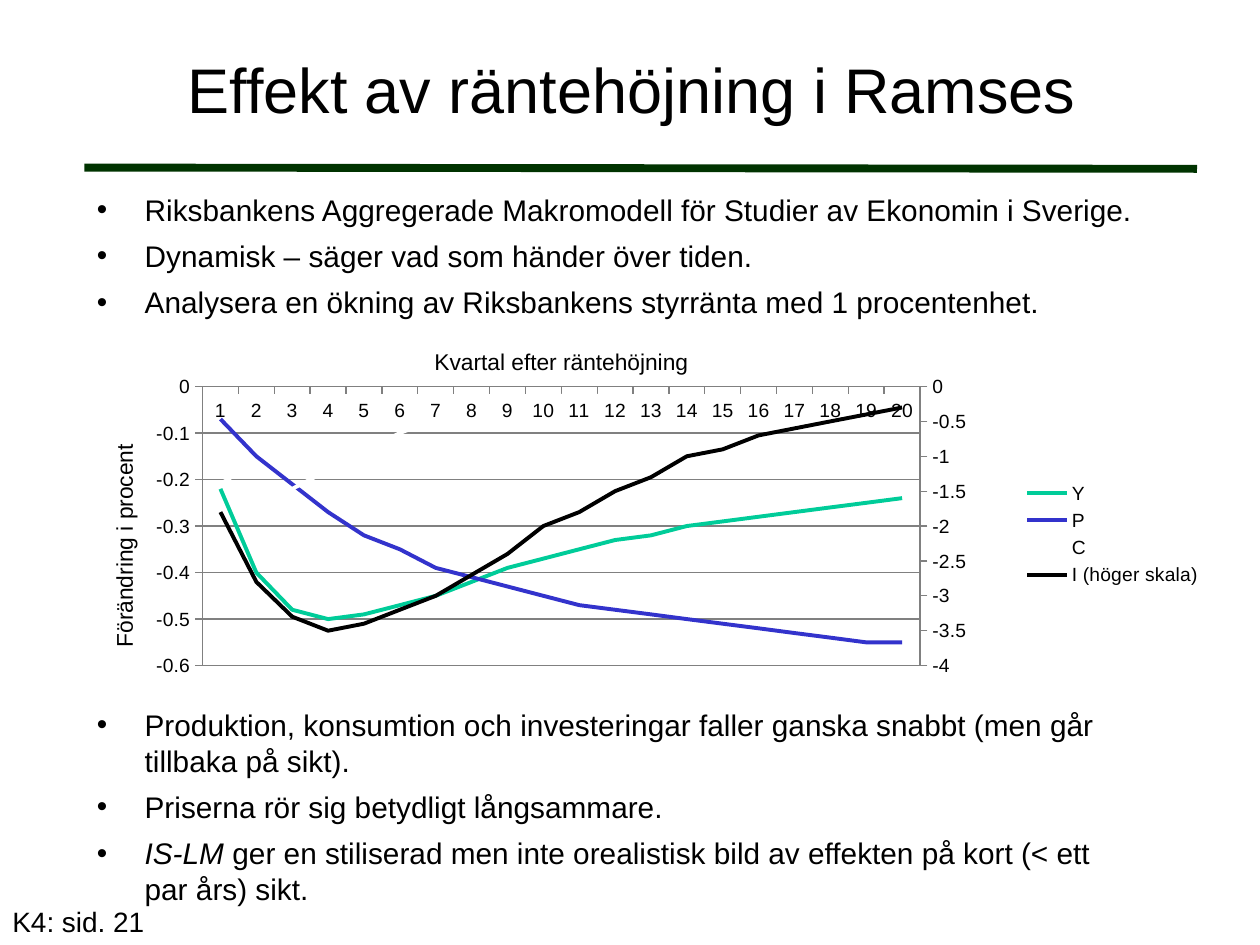
from copy import deepcopy

from lxml.etree import SubElement
from pptx import Presentation
from pptx.chart.data import CategoryChartData
from pptx.dml.color import RGBColor
from pptx.enum.chart import XL_CHART_TYPE as ChartType
from pptx.enum.chart import XL_LEGEND_POSITION as LegendPosition
from pptx.enum.chart import XL_TICK_MARK as TickMark
from pptx.enum.shapes import MSO_CONNECTOR as Connector
from pptx.enum.text import MSO_ANCHOR as Anchor
from pptx.enum.text import PP_ALIGN as Align
from pptx.oxml.ns import qn
from pptx.util import Inches, Pt

FONT = "Arial"
COLORS = {"text": "000000", "rule": "003300", "axis": "808080",
          "Y": "00CC99", "P": "3333CC", "C": "FFFFFF", "I (höger skala)": "000000"}

# Responses in percent, quarters 1 to 20
RESPONSES = {
    "Y": [-0.22, -0.4, -0.48, -0.5, -0.49, -0.47, -0.45, -0.42, -0.39, -0.37,
          -0.35, -0.33, -0.32, -0.3, -0.29, -0.28, -0.27, -0.26, -0.25, -0.24],
    "P": [-0.07, -0.15, -0.21, -0.27, -0.32, -0.35, -0.39, -0.41, -0.43, -0.45,
          -0.47, -0.48, -0.49, -0.5, -0.51, -0.52, -0.53, -0.54, -0.55, -0.55],
    "C": [-0.19, -0.24, -0.22, -0.18, -0.14, -0.1, -0.07, -0.05, -0.03, -0.02,
          -0.02, -0.02, -0.03, -0.03, -0.04, -0.04, -0.05, -0.06, -0.06, -0.07],
    "I (höger skala)": [-1.8, -2.8, -3.3, -3.5, -3.4, -3.2, -3, -2.7, -2.4, -2,
                        -1.8, -1.5, -1.3, -1, -0.9, -0.7, -0.6, -0.5, -0.4, -0.3],
}

# Each bullet is a list of (text, italic) runs
MODEL_BULLETS = [
    [("Riksbankens Aggregerade Makromodell för Studier av Ekonomin i Sverige.", False)],
    [("Dynamisk – säger vad som händer över tiden.", False)],
    [("Analysera en ökning av Riksbankens styrränta med 1 procentenhet.", False)],
]
RESULT_BULLETS = [
    [("Produktion, konsumtion och investeringar faller ganska snabbt "
      "(men går tillbaka på sikt).", False)],
    [("Priserna rör sig betydligt långsammare.", False)],
    [("IS-LM", True),
     (" ger en stiliserad men inte orealistisk bild av effekten på kort "
      "(< ett par års) sikt.", False)],
]


def color(name):
    return RGBColor.from_string(COLORS[name])


def style_font(font, size):
    font.name = FONT
    font.size = Pt(size)
    font.color.rgb = color("text")


def add_run(paragraph, text, size, italic=False):
    run = paragraph.add_run()
    run.text = text
    style_font(run.font, size)
    if italic:
        run.font.italic = True


def add_text_frame(slide, left, top, width, height, wrap=True, rotation=0):
    box = slide.shapes.add_textbox(Inches(left), Inches(top), Inches(width), Inches(height))
    box.rotation = rotation
    box.text_frame.word_wrap = wrap
    return box.text_frame


def add_label(slide, text, size, *place, **options):
    paragraph = add_text_frame(slide, *place, **options).paragraphs[0]
    add_run(paragraph, text, size)


def add_bullets(slide, bullets, *place):
    frame = add_text_frame(slide, *place)
    for index, runs in enumerate(bullets):
        paragraph = frame.add_paragraph() if index else frame.paragraphs[0]
        paragraph.space_after = Pt(6)
        properties = paragraph._p.get_or_add_pPr()
        properties.set("marL", str(Inches(0.38)))
        properties.set("indent", str(Inches(-0.38)))
        SubElement(properties, qn("a:buFont"), typeface=FONT)
        SubElement(properties, qn("a:buChar"), char="•")
        for text, italic in runs:
            add_run(paragraph, text, 17, italic)


def set_title(slide, text):
    title = slide.shapes.title
    title.left, title.top = Inches(0.67), Inches(0.08)
    title.width, title.height = Inches(8.83), Inches(1.24)
    title.text_frame.vertical_anchor = Anchor.MIDDLE
    paragraph = title.text_frame.paragraphs[0]
    paragraph.alignment = Align.CENTER
    add_run(paragraph, text, 36)


def add_rule(slide):
    rule = slide.shapes.add_connector(
        Connector.STRAIGHT, Inches(0.67), Inches(1.33), Inches(9.5), Inches(1.34))
    rule.line.color.rgb = color("rule")
    rule.line.width = Pt(4.5)
    SubElement(rule._element.spPr, qn("a:effectLst"))


def style_axis(axis):
    axis.major_tick_mark = TickMark.OUTSIDE
    axis.minor_tick_mark = TickMark.NONE
    axis.format.line.color.rgb = color("axis")
    style_font(axis.tick_labels.font, 11)


def set_plot_layout(plot_area, x, y, width, height):
    for old in plot_area.findall(qn("c:layout")):
        plot_area.remove(old)
    layout = SubElement(plot_area, qn("c:layout"))
    plot_area.insert(0, layout)
    manual = SubElement(layout, qn("c:manualLayout"))
    settings = {"layoutTarget": "inner", "xMode": "edge", "yMode": "edge",
                "x": x, "y": y, "w": width, "h": height}
    for name, value in settings.items():
        SubElement(manual, qn("c:" + name), val=str(value))


def move_last_series_to_right_axis(plot_area, minimum, unit):
    left_plot = plot_area.find(qn("c:lineChart"))
    right_plot = deepcopy(left_plot)
    left_plot.addnext(right_plot)
    left_plot.remove(left_plot.findall(qn("c:ser"))[-1])
    for series in right_plot.findall(qn("c:ser"))[:-1]:
        right_plot.remove(series)

    category = deepcopy(plot_area.find(qn("c:catAx")))
    value = deepcopy(plot_area.find(qn("c:valAx")))
    plot_area.find(qn("c:valAx")).addnext(value)
    value.addnext(category)
    ids = {category.find(qn("c:axId")).get("val"): "5001",
           value.find(qn("c:axId")).get("val"): "5002"}
    for part in (right_plot, category, value):
        for tag in ("c:axId", "c:crossAx"):
            for reference in part.findall(qn(tag)):
                reference.set("val", ids[reference.get("val")])

    category.find(qn("c:delete")).set("val", "1")
    value.remove(value.find(qn("c:majorGridlines")))
    value.find(qn("c:axPos")).set("val", "r")
    value.find(qn("c:crosses")).set("val", "max")
    value.find(qn("c:scaling")).find(qn("c:min")).set("val", str(minimum))
    value.find(qn("c:majorUnit")).set("val", str(unit))


def add_response_chart(slide):
    data = CategoryChartData(number_format="General")
    data.categories = [str(quarter) for quarter in range(1, 21)]
    for name, values in RESPONSES.items():
        data.add_series(name, values)
    chart = slide.shapes.add_chart(
        ChartType.LINE, Inches(1.14), Inches(2.98), Inches(8.5), Inches(2.5), data).chart
    style_font(chart.font, 11)
    chart.has_title = False
    chart.has_legend = True
    chart.legend.position = LegendPosition.RIGHT
    chart.legend.include_in_layout = False
    style_font(chart.legend.font, 11)

    chart.plots[0].vary_by_categories = False
    for series in chart.plots[0].series:
        series.smooth = False
        series.format.line.color.rgb = color(series.name)
        series.format.line.width = Pt(2.25)

    style_axis(chart.category_axis)
    axis = chart.value_axis
    style_axis(axis)
    axis.minimum_scale, axis.maximum_scale, axis.major_unit = -0.6, 0, 0.1
    axis.has_major_gridlines = True
    axis.major_gridlines.format.line.color.rgb = color("axis")

    plot_area = chart._chartSpace.chart.plotArea
    set_plot_layout(plot_area, 0.055, 0.029, 0.67, 0.892)
    move_last_series_to_right_axis(plot_area, -4, 0.5)


def main():
    presentation = Presentation()
    presentation.slide_width, presentation.slide_height = Inches(10), Inches(7.5)
    slide = presentation.slides.add_slide(presentation.slide_layouts[5])

    # Heading
    add_rule(slide)
    set_title(slide, "Effekt av räntehöjning i Ramses ")

    # Chart with its axis captions
    add_response_chart(slide)
    add_label(slide, "Kvartal efter räntehöjning", 13, 3.35, 2.71, 2.24, 0.32, wrap=False)
    add_label(slide, "Förändring i procent", 13, -0.35, 3.74, 2.67, 0.32, rotation=270)

    # Bullets above and below the chart
    add_bullets(slide, MODEL_BULLETS, 0.67, 1.47, 8.58, 1.51)
    add_bullets(slide, RESULT_BULLETS, 0.67, 5.56, 8.43, 1.7)

    # Page reference
    add_label(slide, "K4: sid. 21", 16, 0, 7.13, 2.08, 0.37)

    presentation.save("out.pptx")


if __name__ == "__main__":
    main()
